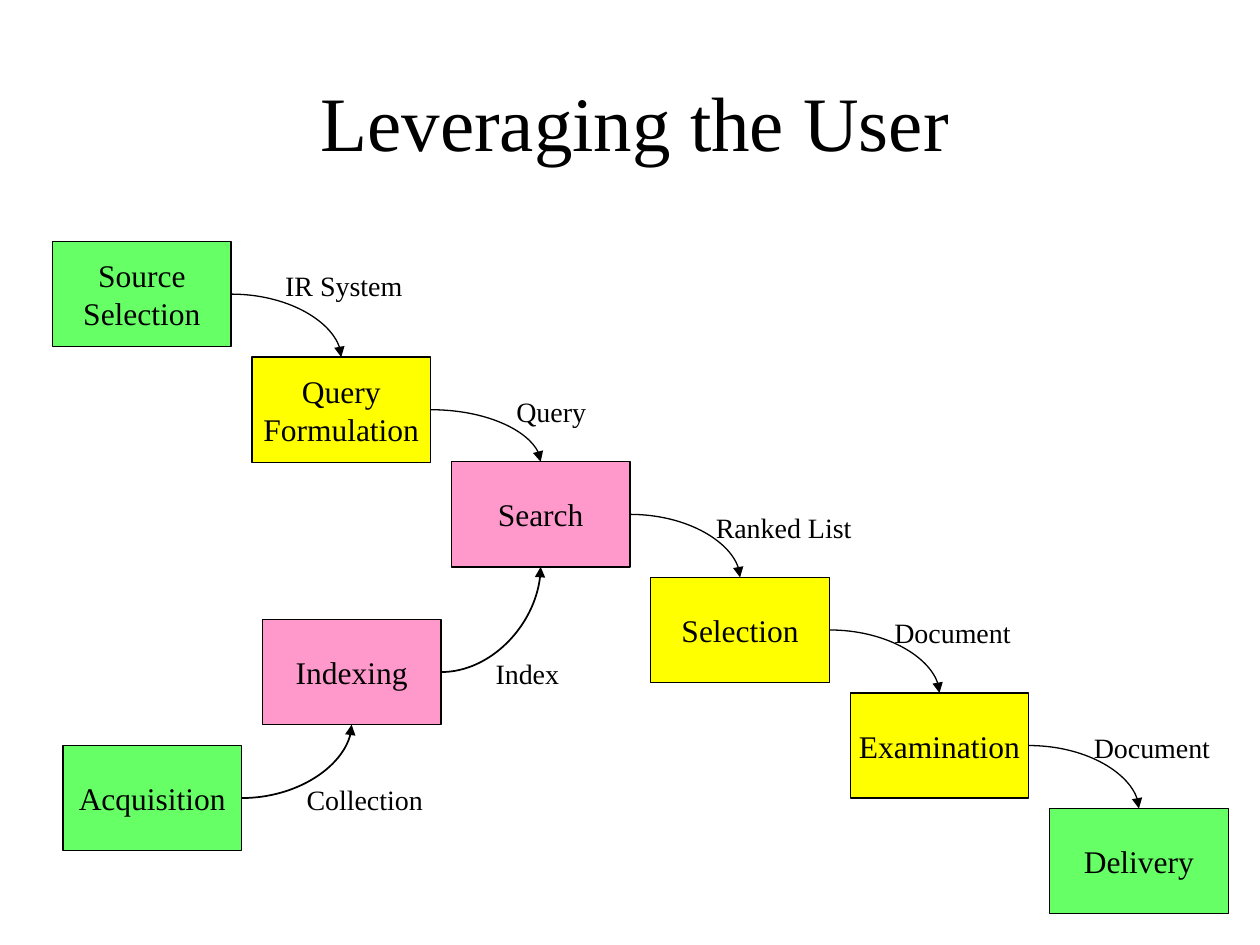
from dataclasses import dataclass

from lxml.etree import SubElement
from pptx import Presentation
from pptx.dml.color import RGBColor
from pptx.enum.shapes import MSO_CONNECTOR, MSO_SHAPE
from pptx.enum.text import MSO_ANCHOR, MSO_AUTO_SIZE, PP_ALIGN
from pptx.oxml.ns import qn
from pptx.shapes.autoshape import Shape
from pptx.slide import Slide
from pptx.text.text import TextFrame
from pptx.util import Cm, Pt


@dataclass(frozen=True)
class Theme:
    font: str = "Times New Roman"
    ink: RGBColor = RGBColor(0x00, 0x00, 0x00)
    green: RGBColor = RGBColor(0x66, 0xFF, 0x66)
    yellow: RGBColor = RGBColor(0xFF, 0xFF, 0x00)
    pink: RGBColor = RGBColor(0xFF, 0x99, 0xCC)
    title_size: int = 44
    stage_size: int = 18
    label_size: int = 16
    outline: float = 0.75
    feed_line: float = 1


@dataclass(frozen=True)
class Stage:
    lines: tuple[str, ...]
    fill: RGBColor
    left: float
    top: float


@dataclass(frozen=True)
class Flow:
    source: str
    target: str
    label: str
    left: float
    top: float
    width: float
    rising: bool = False


THEME = Theme()
STAGE_WIDTH, STAGE_HEIGHT = 3.6, 2.12
LABEL_HEIGHT = 0.94
STAIR_LEFT, STAIR_STEP = 1.06, 4.02
RIGHT_SIDE, TOP_SIDE, BOTTOM_SIDE = 3, 0, 2

# Main staircase: text lines, fill, top edge
STAIRS = [
    (("Source", "Selection"), THEME.green, 4.87),
    (("Query", "Formulation"), THEME.yellow, 7.2),
    (("Search",), THEME.pink, 9.31),
    (("Selection",), THEME.yellow, 11.64),
    (("Examination",), THEME.yellow, 13.97),
    (("Delivery",), THEME.green, 16.3),
]
STAGES = [
    Stage(lines, fill, STAIR_LEFT + index * STAIR_STEP, top)
    for index, (lines, fill, top) in enumerate(STAIRS)
] + [
    Stage(("Indexing",), THEME.pink, 5.29, 12.49),
    Stage(("Acquisition",), THEME.green, 1.27, 15.03),
]
FLOWS = [
    Flow("Source Selection", "Query Formulation", "IR System", 5.5, 5.29, 2.9),
    Flow("Query Formulation", "Search", "Query", 10.16, 7.83, 1.93),
    Flow("Search", "Selection", "Ranked List", 14.18, 10.16, 3.25),
    Flow("Selection", "Examination", "Document", 17.78, 12.28, 2.87),
    Flow("Examination", "Delivery", "Document", 21.8, 14.6, 2.87),
    Flow("Indexing", "Search", "Index", 9.74, 13.12, 1.8, rising=True),
    Flow("Acquisition", "Indexing", "Collection", 5.93, 15.66, 2.87, rising=True),
]


def write_lines(frame: TextFrame, lines: tuple[str, ...], size: int, align: PP_ALIGN) -> None:
    for index, line in enumerate(lines):
        para = frame.add_paragraph() if index else frame.paragraphs[0]
        para.alignment = align
        span = para.add_run()
        span.text = line
        span.font.name = THEME.font
        span.font.size = Pt(size)
        span.font.color.rgb = THEME.ink


def write_title(page: Slide, text: str) -> None:
    title = page.shapes.title
    title.left, title.top, title.width, title.height = Cm(1.48), Cm(0.85), Cm(22.65), Cm(3.18)
    title.text_frame.vertical_anchor = MSO_ANCHOR.MIDDLE
    write_lines(title.text_frame, (text,), THEME.title_size, PP_ALIGN.CENTER)


def draw_stage(page: Slide, stage: Stage) -> Shape:
    box = page.shapes.add_shape(
        MSO_SHAPE.RECTANGLE, Cm(stage.left), Cm(stage.top), Cm(STAGE_WIDTH), Cm(STAGE_HEIGHT)
    )
    box.shadow.inherit = False
    box.fill.solid()
    box.fill.fore_color.rgb = stage.fill
    box.line.color.rgb = THEME.ink
    box.line.width = Pt(THEME.outline)
    box.text_frame.word_wrap = False
    box.text_frame.vertical_anchor = MSO_ANCHOR.MIDDLE
    write_lines(box.text_frame, stage.lines, THEME.stage_size, PP_ALIGN.CENTER)
    return box


def draw_arrow(page: Slide, source: Shape, target: Shape, rising: bool) -> None:
    arrow = page.shapes.add_connector(MSO_CONNECTOR.CURVE, 0, 0, 0, 0)
    arrow.begin_connect(source, RIGHT_SIDE)
    arrow.end_connect(target, BOTTOM_SIDE if rising else TOP_SIDE)
    arrow.line.color.rgb = THEME.ink
    arrow.line.width = Pt(THEME.feed_line if rising else THEME.outline)
    # Quarter-turn curve, arrowhead and no shadow
    properties = arrow._element.spPr
    properties.find(qn("a:prstGeom")).set("prst", "curvedConnector2")
    SubElement(properties.find(qn("a:ln")), qn("a:tailEnd"), type="triangle")
    SubElement(properties, qn("a:effectLst"))


def draw_label(page: Slide, flow: Flow) -> None:
    box = page.shapes.add_textbox(Cm(flow.left), Cm(flow.top), Cm(flow.width), Cm(LABEL_HEIGHT))
    box.text_frame.word_wrap = False
    box.text_frame.auto_size = MSO_AUTO_SIZE.SHAPE_TO_FIT_TEXT
    write_lines(box.text_frame, (flow.label,), THEME.label_size, PP_ALIGN.LEFT)


def main() -> None:
    deck = Presentation()
    deck.slide_width, deck.slide_height = Cm(25.4), Cm(19.05)
    page = deck.slides.add_slide(deck.slide_layouts[5])
    write_title(page, "Leveraging the User")

    # Stages first, so that the arrows can join them
    boxes = {" ".join(stage.lines): draw_stage(page, stage) for stage in STAGES}
    for flow in FLOWS:
        draw_arrow(page, boxes[flow.source], boxes[flow.target], flow.rising)
        draw_label(page, flow)

    deck.save("out.pptx")


if __name__ == "__main__":
    main()
